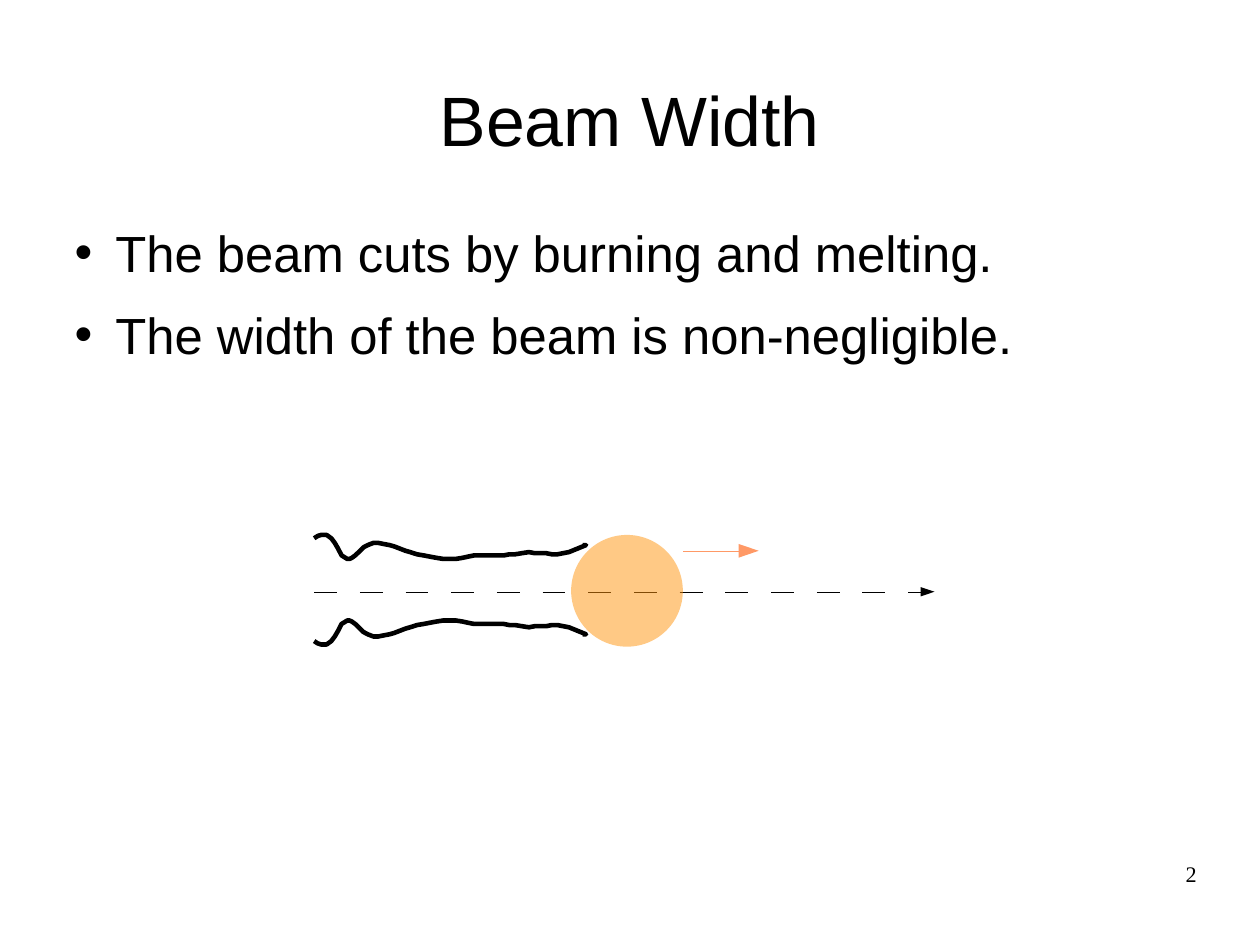
from pptx import Presentation
from pptx import util as u
from pptx.dml.color import RGBColor
from pptx.enum import shapes, text
from pptx.oxml.ns import qn
from lxml import etree

THEME = {
    "ink": "000000", "beam": "FF940D", "move": "FF9966",
    "sans": "Arial", "serif": "Times New Roman",
    "head": 44, "body": 32, "page": 14,
    "thin": 0.25, "thick": 2.89, "clear": 50000,
}
SIZE = (794.16, 594.72)

TITLE = "Beam Width"
POINTS = ["The beam cuts by burning and melting.",
          "The width of the beam is non-negligible."]
PAGE = "2"

EDGE = [
    (198, 339.1), (200.2, 337.7), (202.3, 337), (205.9, 337), (208.8, 339.1),
    (211, 342), (213.1, 345.6), (213.8, 347), (215.3, 349.9), (218.9, 352.1),
    (220.3, 352.1), (221.8, 351.4), (223.9, 349.9), (226.1, 347.8),
    (229, 344.9), (231.8, 343.4), (235.4, 342), (238.3, 342), (241.9, 342.7),
    (245.5, 343.4), (248.4, 344.2), (252, 345.6), (255.6, 347), (258.5, 347.8),
    (262.8, 349.2), (267.1, 349.9), (270.7, 350.6), (275, 351.4),
    (279.4, 352.1), (287.3, 352.1), (291.6, 351.4), (295.2, 350.6),
    (298.8, 349.9), (317.5, 349.9), (321.1, 349.2), (324.7, 349.2),
    (329, 348.5), (333.4, 347.8), (337, 348.5), (344.2, 348.5),
    (347.8, 349.2), (351.4, 349.2), (355, 348.5), (358.6, 347.8),
    (369.4, 343.4), (367.2, 343.4),
]
MIRROR = 743
DISC = (360, 337, 70.4)
PATH = {"x": 198, "y": 372.8, "dash": 14.4, "step": 28.8, "end": 581}
TIPS = [(580.3, 372.8, 8.7, 5.8, "ink"), (465.6, 347, 12.6, 8.6, "move")]
SHAFT = (430.6, 465.6, 347)

deck = Presentation()
deck.slide_width, deck.slide_height = map(u.Pt, SIZE)
slide = deck.slides.add_slide(deck.slide_layouts[6])
parts = slide.shapes


def tint(name):
    return RGBColor.from_string(THEME[name])


def write(lines, box, size, font, align=text.PP_ALIGN.LEFT, gap=0, hang=0):
    frame = parts.add_textbox(*map(u.Pt, box)).text_frame
    frame.margin_left = frame.margin_right = 0
    frame.margin_top = frame.margin_bottom = 0
    frame.word_wrap = True
    for n, line in enumerate(lines):
        para = frame.add_paragraph() if n else frame.paragraphs[0]
        para.alignment = align
        para.space_before = u.Pt(gap if n else 0)
        run = para.add_run()
        run.text = line
        run.font.size = u.Pt(THEME[size])
        run.font.name = THEME[font]
        run.font.color.rgb = tint("ink")
        if hang:
            props = para._p.get_or_add_pPr()
            props.set("marL", str(u.Pt(hang)))
            props.set("indent", str(-u.Pt(hang)))
            etree.SubElement(props, qn("a:buFont")).set("typeface", THEME[font])
            etree.SubElement(props, qn("a:buChar")).set("char", "•")


def line(x, end, y, color):
    rod = parts.add_connector(shapes.MSO_CONNECTOR.STRAIGHT,
                              *map(u.Pt, (x, y, end, y)))
    rod.line.width = u.Pt(THEME["thin"])
    rod.line.color.rgb = tint(color)
    etree.SubElement(rod._element.spPr, qn("a:effectLst"))


def trace(spots, close):
    spots = [(u.Pt(x), u.Pt(y)) for x, y in spots]
    pen = parts.build_freeform(*spots[0])
    pen.add_line_segments(spots[1:], close=close)
    form = pen.convert_to_shape()
    form.shadow.inherit = False
    return form


def paint(form, color):
    form.fill.solid()
    form.fill.fore_color.rgb = tint(color)
    form.line.fill.background()


write([TITLE], (272, 48.5, 250, 54), "head", "sans", text.PP_ALIGN.CENTER)
write(POINTS, (47, 139.4, 680, 90), "body", "sans", gap=13.6, hang=27.7 - 2)

x = PATH["x"]
while x < PATH["end"]:
    line(x, min(x + PATH["dash"], PATH["end"]), PATH["y"], "ink")
    x += PATH["step"]

for spots in (EDGE, [(x, MIRROR - y) for x, y in EDGE]):
    rim = trace(spots, False)
    rim.fill.background()
    rim.line.width = u.Pt(THEME["thick"])
    rim.line.color.rgb = tint("ink")

left, top, wide = DISC
disc = parts.add_shape(shapes.MSO_SHAPE.OVAL, *map(u.Pt, (left, top, wide, wide)))
disc.shadow.inherit = False
paint(disc, "beam")
shade = disc._element.spPr.find(".//" + qn("a:srgbClr"))
etree.SubElement(shade, qn("a:alpha")).set("val", str(THEME["clear"]))

line(*SHAFT, "move")
for x, y, long, tall, color in TIPS:
    paint(trace([(x, y - tall / 2), (x, y + tall / 2), (x + long, y)], True), color)

write([PAGE], (747.3, 542.3, 9, 17), "page", "serif")

deck.save("out.pptx")
